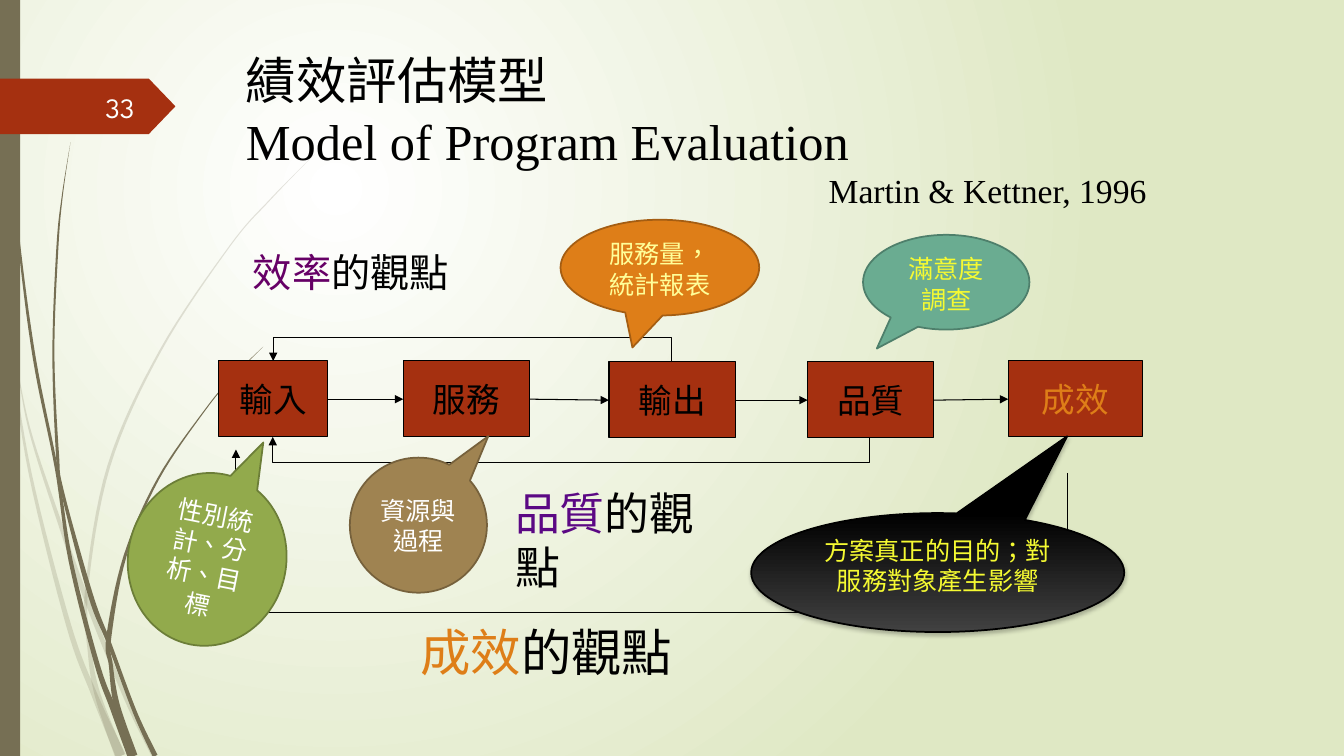
import dataclasses
import math
import typing

import lxml.etree
import pptx
import pptx.dml.color
import pptx.enum.shapes
import pptx.enum.text
import pptx.oxml.ns
import pptx.util

Inches = pptx.util.Inches
SHAPE = pptx.enum.shapes.MSO_SHAPE
CONN = pptx.enum.shapes.MSO_CONNECTOR
ALIGN = pptx.enum.text.PP_ALIGN
ANCHOR = pptx.enum.text.MSO_ANCHOR
qn = pptx.oxml.ns.qn

COLORS = {
    "black": "000000", "white": "FFFFFF", "number": "FEFFFF", "olive": "766F54",
    "rust": "A53010", "orange": "DE7E18", "orange_edge": "A45D12", "purple": "660066",
    "violet": "5B0884", "teal": "6AAC91", "teal_edge": "4E7F6B", "yellow": "F5FA32",
    "pale_yellow": "FFFF99", "green": "92AA4C", "green_edge": "6C7E38",
    "brown": "9F8351", "brown_edge": "76613C", "charcoal": "414141", "sage": "DFE8C4",
}
SERIF = "Times New Roman"
SANS = "League Spartan"
Box = tuple[float, float, float, float]
Spine = list[tuple[float, float, float]]


@dataclasses.dataclass
class Run:
    text: str
    size: float
    color: str = "black"
    font: str = SERIF


@dataclasses.dataclass
class Para:
    runs: list[Run]
    align: typing.Any = ALIGN.LEFT


@dataclasses.dataclass
class Label:
    box: Box
    paras: list[Para]
    wrap: bool = True
    anchor: typing.Any = ANCHOR.TOP


@dataclasses.dataclass
class Callout:
    box: Box
    tip: tuple[float, float]
    lines: list[str]
    fill: str
    edge: str
    color: str
    anchor: typing.Any = ANCHOR.TOP
    turn: float = 0


@dataclasses.dataclass
class Elbow:
    frame: Box
    preset: str
    xfrm: dict[str, str]
    bend: float = 0
    arrow: bool = True


def rgb(name: str) -> pptx.dml.color.RGBColor:
    return pptx.dml.color.RGBColor.from_string(COLORS[name])


def sub(parent: typing.Any, tag: str, **attrs: str) -> typing.Any:
    return lxml.etree.SubElement(parent, qn(tag), attrs)


def assign(obj: typing.Any, values: dict[str, typing.Any]) -> None:
    for name, value in values.items():
        setattr(obj, name, value)


def inches(box: Box) -> list[int]:
    return [Inches(v) for v in box]


def paint(sp: typing.Any, fill: str, edge: str = "", width: float = 0.75) -> None:
    sp.shadow.inherit = False
    sp.fill.solid()
    sp.fill.fore_color.rgb = rgb(fill)
    if edge:
        sp.line.color.rgb = rgb(edge)
        sp.line.width = pptx.util.Pt(width)
    else:
        sp.line.fill.background()


def blend(fill: typing.Any, first: str, last: str) -> None:
    fill.gradient()
    for stop, name, pos in zip(fill.gradient_stops, (first, last), (0, 1)):
        stop.color.rgb = rgb(name)
        stop.position = pos


def write(sp: typing.Any, paras: list[Para], wrap: bool, anchor: typing.Any) -> None:
    tf = sp.text_frame
    assign(tf, {"word_wrap": wrap, "vertical_anchor": anchor})
    for i, para in enumerate(paras):
        p = tf.add_paragraph() if i else tf.paragraphs[0]
        p.alignment = para.align
        for run in para.runs:
            r = p.add_run()
            r.text = run.text
            assign(r.font, {"size": pptx.util.Pt(run.size), "name": run.font})
            r.font.color.rgb = rgb(run.color)
            r.font._element.set("lang", "zh-TW")


def add_label(s: typing.Any, label: Label) -> None:
    write(s.shapes.add_textbox(*inches(label.box)), label.paras, label.wrap, label.anchor)


def add_wisp(s: typing.Any, spine: Spine, alpha: int) -> None:
    pts = []
    for i in range(len(spine) - 1):
        quad = [spine[max(0, min(len(spine) - 1, i + k))] for k in (-1, 0, 1, 2)]
        for t in (j / 8 for j in range(8)):
            pts.append(tuple(
                (2 * b + (c - a) * t + (2 * a - 5 * b + 4 * c - d) * t**2
                 + (3 * b - a - 3 * c + d) * t**3) / 2 for a, b, c, d in zip(*quad)))
    pts.append(spine[-1])
    left, right = [], []
    for i, (x, y, w) in enumerate(pts):
        x0, y0, _ = pts[max(i - 1, 0)]
        x1, y1, _ = pts[min(i + 1, len(pts) - 1)]
        size = math.hypot(x1 - x0, y1 - y0)
        dx, dy = (y1 - y0) / size * w / 2, (x0 - x1) / size * w / 2
        left.append((Inches(x + dx), Inches(y + dy)))
        right.append((Inches(x - dx), Inches(y - dy)))
    outline = left + right[::-1]
    fb = s.shapes.build_freeform(*outline[0])
    fb.add_line_segments(outline[1:], close=True)
    sp = fb.convert_to_shape()
    paint(sp, "olive")
    if alpha < 100:
        sub(sp._element.spPr.find(".//" + qn("a:srgbClr")), "a:alpha", val=str(alpha * 1000))


def add_line(s: typing.Any, kind: typing.Any, ends: Box, arrow: bool = True) -> typing.Any:
    cx = s.shapes.add_connector(kind, *inches(ends))
    cx.line.color.rgb = rgb("black")
    cx.line.width = pptx.util.Pt(0.75)
    if arrow:
        sub(cx.line._get_or_add_ln(), "a:tailEnd", type="triangle")
    sub(cx._element.spPr, "a:effectLst")
    return cx


def add_elbow(s: typing.Any, elbow: Elbow) -> None:
    x, y, w, h = elbow.frame
    cx = add_line(s, CONN.ELBOW, (x, y, x + w, y + h), elbow.arrow)
    for name, value in elbow.xfrm.items():
        cx._element.spPr.find(qn("a:xfrm")).set(name, value)
    geom = cx._element.spPr.find(qn("a:prstGeom"))
    geom.set("prst", elbow.preset)
    if elbow.bend:
        sub(geom.find(qn("a:avLst")), "a:gd", name="adj1", fmla=f"val {elbow.bend * 100000:.0f}")


def add_callout(s: typing.Any, c: Callout) -> None:
    sp = s.shapes.add_shape(SHAPE.OVAL_CALLOUT, *inches(c.box))
    paint(sp, c.fill, c.edge, 1.25)
    sp.adjustments[0], sp.adjustments[1] = c.tip
    sp.rotation = c.turn
    write(sp, [Para([Run(t, 18, c.color, SANS)], ALIGN.CENTER) for t in c.lines], True, c.anchor)
    if c.fill == "charcoal":
        blend(sp.fill, "charcoal", "black")
        sp.fill.gradient_angle = 270
        sp.text_frame._txBody.bodyPr.set("rot", "10800000")
        shadow = sub(sp._element.spPr.find(qn("a:effectLst")), "a:outerShdw", blurRad="38100",
                     dist="25400", dir="5400000", rotWithShape="0")
        sub(sub(shadow, "a:srgbClr", val=COLORS["black"]), "a:alpha", val="25000")


PALE_WISPS: list[Spine] = [
    [(0, 2.9, .08), (.1, 3.45, .02), (.3, 4.7, .03), (.68, 6.2, .05), (.94, 6.9, .06), (1.2, 7.5, .1)],
    [(.14, 3.45, 0), (.29, 4.25, .02), (.6, 5.21, .04), (.86, 5.95, .05), (1.25, 6.93, .04), (1.53, 7.5, .05)],
    [(3.12, 1.53, 0), (2.68, 1.98, .01), (2.28, 2.44, .01), (1.59, 3.48, .02), (1.08, 4.62, .03),
     (.86, 5.84, .03), (.89, 6.46, .04), (.97, 6.9, .06), (1.19, 7.5, .1)],
]
DARK_WISPS: list[Spine] = [
    [(.03, 0, .01), (.04, .48, .01), (.07, 1.1, .01), (.18, 2.33, .02), (.34, 3.55, .03), (.56, 4.65, .03),
     (.7, 5.56, .04), (.96, 6.58, .05), (1.12, 7.02, .06), (1.31, 7.5, .09)],
    [(.7, 1.41, 0), (.62, 1.93, .01), (.57, 2.45, .02), (.53, 3.49, .02), (.57, 4.5, .03), (.62, 4.88, .03),
     (.9, 5.91, .05), (1.09, 6.4, .04), (1.34, 7.07, .04), (1.54, 7.5, .05)],
    [(2.61, 3.44, 0), (2.31, 3.74, .01), (2.04, 4.06, .01), (1.57, 4.75, .02), (1.24, 5.52, .03),
     (1.08, 6.32, .05), (1.1, 6.6, .04), (1.16, 7, .06), (1.33, 7.5, .07)],
]
STAGES = [("輸入", 2.17, 3.58, 1.08), ("服務", 4, 3.58, 1.25), ("輸出", 6.04, 3.59, 1.25),
          ("品質", 8.01, 3.59, 1.25), ("成效", 10, 3.58, 1.33)]
ELBOWS = [
    Elbow((4.68, 1.61, .01, 3.95), "bentConnector3", {"rot": "5400000", "flipH": "1"}, 25),
    Elbow((5.66, 1.38, .01, 5.92), "bentConnector3", {"rot": "16200000", "flipV": "1"}, -25),
    Elbow((5.73, 1.22, 1.39, 8.33), "bentConnector2", {"rot": "5400000"}, arrow=False),
]
VIEWS = [("效率", "purple", 28, (2.41, 2.41, 2.42, .57), True),
         ("品質", "violet", 32, (5.01, 4.77, 2.42, .63), False),
         ("成效", "orange", 36, (4.07, 6.11, 3.39, .7), True)]
TITLE = Label((2.34, .44, 9.13, 1.72), [
    Para([Run("績效評估模型", 36)]), Para([Run("Model of Program Evaluation", 36)]),
    Para([Run("Martin & Kettner, 1996", 24)], ALIGN.RIGHT)])
NUMBER = Label((.58, .86, .85, .4), [Para([Run("33", 20, "number", SANS)], ALIGN.RIGHT)], anchor=ANCHOR.MIDDLE)
CALLOUTS = [
    Callout((8.56, 2.33, 1.65, .94), (-.417, .7), ["滿意度", "調查"], "teal", "teal_edge", "yellow"),
    Callout((7.45, 5.09, 3.7, 1.18), (-.347, 1.146), ["方案真正的目的；對服務對象產生影響"],
            "charcoal", "black", "yellow", turn=180),
    Callout((5.56, 2.18, 1.97, .95), (-.138, .834), ["服務量，統計報表"], "orange", "orange_edge", "pale_yellow"),
    Callout((1.27, 4.69, 1.57, 1.72), (.203, -.725), ["性別統計、分析、目標"],
            "green", "green_edge", "white", ANCHOR.MIDDLE, 11.3),
    Callout((3.47, 4.54, 1.36, 1.34), (.51, -.659), ["資源與過程"], "brown", "brown_edge", "white", ANCHOR.MIDDLE),
]


def main() -> None:
    prs = pptx.Presentation()
    assign(prs, {"slide_width": Inches(13.33), "slide_height": Inches(7.5)})
    s = prs.slides.add_slide(prs.slide_layouts[6])
    blend(s.background.fill, "white", "sage")
    grad = s._element.find(".//" + qn("a:gradFill"))
    grad.remove(grad.find(qn("a:lin")))
    sub(sub(grad, "a:path", path="circle"), "a:fillToRect", l="50000", t="50000", r="100000", b="100000")

    for wisps, alpha in ((PALE_WISPS, 20), (DARK_WISPS, 100)):
        for spine in wisps:
            add_wisp(s, spine, alpha)
    paint(s.shapes.add_shape(SHAPE.RECTANGLE, *inches((0, 0, .2, 7.5))), "olive")
    tag = s.shapes.add_shape(SHAPE.PENTAGON, *inches((0, .78, 1.74, .55)))
    tag.adjustments[0] = .48
    paint(tag, "rust")

    for name, x, y, w in STAGES:
        sp = s.shapes.add_shape(SHAPE.FLOWCHART_PROCESS, *inches((x, y, w, .75)))
        paint(sp, "rust", "black")
        color = "orange" if name == "成效" else "black"
        write(sp, [Para([Run(name, 24, color)], ALIGN.CENTER)], False, ANCHOR.MIDDLE)
    for (_, x, y, w), (_, x2, y2, _) in zip(STAGES, STAGES[1:]):
        add_line(s, CONN.STRAIGHT, (x + w, y + .38, x2, y2 + .38))
    for elbow in ELBOWS:
        add_elbow(s, elbow)
    for name, color, size, box, wrap in VIEWS:
        add_label(s, Label(box, [Para([Run(name, size, color), Run("的觀點", size)])], wrap))
    add_label(s, TITLE)
    add_line(s, CONN.STRAIGHT, (2.34, 6.19, 2.34, 4.46))
    for callout in CALLOUTS:
        add_callout(s, callout)
    add_label(s, NUMBER)
    prs.save("out.pptx")


if __name__ == "__main__":
    main()
